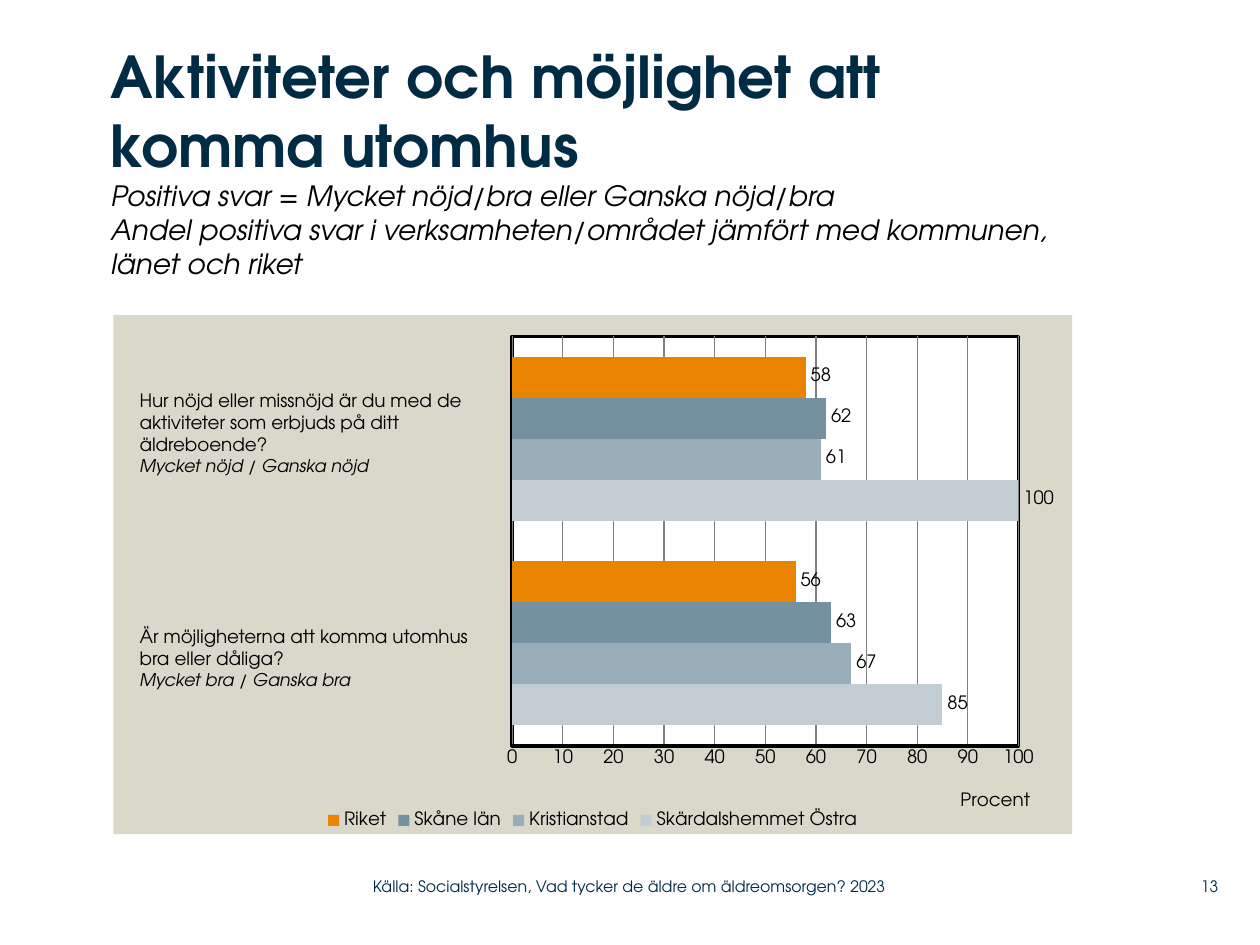
from lxml import etree
from pptx import Presentation
from pptx.chart.data import CategoryChartData
from pptx.dml.color import RGBColor
from pptx.enum.chart import XL_CHART_TYPE, XL_LABEL_POSITION, XL_LEGEND_POSITION, XL_TICK_MARK
from pptx.enum.text import MSO_ANCHOR, PP_ALIGN
from pptx.oxml import parse_xml
from pptx.oxml.ns import nsdecls, qn
from pptx.util import Inches, Pt

BAR = XL_CHART_TYPE.BAR_CLUSTERED
BOTTOM = XL_LEGEND_POSITION.BOTTOM
OUTSIDE = XL_LABEL_POSITION.OUTSIDE_END
NO_TICK = XL_TICK_MARK.NONE
TOP, MIDDLE = MSO_ANCHOR.TOP, MSO_ANCHOR.MIDDLE
LEFT, RIGHT = PP_ALIGN.LEFT, PP_ALIGN.RIGHT

NAVY, BLACK, WHITE, SAND, GREY = "002B45", "000000", "FFFFFF", "DAD7CB", "808080"
SERIES = [
    ("Skärdalshemmet Östra", (85, 100), "C2CDD3"),
    ("Kristianstad", (67, 61), "99ADB9"),
    ("Skåne län", (63, 62), "75909F"),
    ("Riket", (56, 58), "E98300"),
]


def color(value):
    """Turn a hex string into a colour."""
    return RGBColor.from_string(value)


def layout(**values):
    """Make a manual chart layout from fractions of the chart area."""
    parts = "".join(f'<c:{name} val="{value}"/>' for name, value in values.items())
    return parse_xml(f'<c:layout {nsdecls("c")}><c:manualLayout>{parts}</c:manualLayout></c:layout>')


def fill_area(element, fill, line):
    """Make shape properties for a chart area."""
    props = etree.SubElement(element, qn("c:spPr"))
    solid = f'<a:solidFill {nsdecls("a")}><a:srgbClr val="%s"/></a:solidFill>'
    props.append(parse_xml(solid % fill))
    border = etree.SubElement(props, qn("a:ln"))
    if line:
        border.set("w", str(Pt(2)))
        border.append(parse_xml(solid % line))
    else:
        etree.SubElement(border, qn("a:noFill"))
    return props


class SlideBuilder:
    """Holds the style and the current slide."""

    font_name = "TeX Gyre Adventor"

    def __init__(self, deck):
        """Add a title-only page."""
        self.page = deck.slides.add_slide(deck.slide_layouts[5])

    def style(self, font, size, hue=BLACK, bold=False, italic=False):
        """Format a font in the slide's typeface."""
        font.name, font.size = self.font_name, Pt(size)
        font.bold, font.italic = bold, italic
        font.color.rgb = color(hue)

    def set_lines(self, box, lines, anchor=TOP, align=LEFT, inset=None):
        """Fill a box with lines given as text and style."""
        frame = box.text_frame
        frame.word_wrap, frame.vertical_anchor = True, anchor
        if inset is not None:
            frame.margin_left = frame.margin_right = Inches(inset)
            frame.margin_top = frame.margin_bottom = Inches(inset)
        frame.text = "\n".join(text for text, _ in lines)
        for para, (_, look) in zip(frame.paragraphs, lines):
            para.alignment = align
            for span in para.runs:
                self.style(span.font, **look)

    def title(self, place, lines):
        """Move and fill the title placeholder."""
        box = self.page.shapes.title
        box.left, box.top, box.width, box.height = map(Inches, place)
        self.set_lines(box, lines, inset=0)

    def text(self, place, lines, **options):
        """Add a text box."""
        box = self.page.shapes.add_textbox(*map(Inches, place))
        self.set_lines(box, lines, **options)

    def bar_chart(self, place, categories, series, unit):
        """Add the clustered bar chart."""
        data = CategoryChartData()
        data.categories = categories
        for name, values, _ in series:
            data.add_series(name, values)
        chart = self.page.shapes.add_chart(BAR, *map(Inches, place), data).chart
        self.style(chart.font, 10.5)
        chart.has_title = False
        chart.has_legend = True
        chart.legend.position = BOTTOM
        chart.legend.include_in_layout = False
        self.style(chart.legend.font, 10.5)

        plot = chart.plots[0]
        plot.gap_width, plot.overlap, plot.vary_by_categories = 100, 0, False
        for bars, (_, _, hue) in zip(plot.series, series):
            bars.format.fill.solid()
            bars.format.fill.fore_color.rgb = color(hue)
            labels = bars.data_labels
            labels.show_value, labels.position = True, OUTSIDE
            self.style(labels.font, 10.5)

        chart.category_axis.visible = False
        axis = chart.value_axis
        axis.minimum_scale, axis.maximum_scale, axis.major_unit = 0, 100, 10
        axis.major_tick_mark = axis.minor_tick_mark = NO_TICK
        axis.format.line.color.rgb = color(BLACK)
        axis.format.line.width = Pt(2)
        axis.major_gridlines.format.line.color.rgb = color(GREY)
        axis.major_gridlines.format.line.width = Pt(0.75)
        self.style(axis.tick_labels.font, 10.5)
        axis.axis_title.text_frame.text = unit
        self.style(axis.axis_title.text_frame.paragraphs[0].runs[0].font, 10.5)
        self.arrange(chart, axis)

    def arrange(self, chart, axis):
        """Place and fill the parts of the chart."""
        title = axis.axis_title._element
        for old in title.findall(qn("c:layout")):
            title.remove(old)
        title.find(qn("c:tx")).addnext(layout(xMode="edge", yMode="edge", x=0.88, y=0.91))
        space = chart._chartSpace
        area = space.chart.plotArea
        for old in area.findall(qn("c:layout")):
            area.remove(old)
        area.insert(0, layout(layoutTarget="inner", xMode="edge", yMode="edge",
                              x=0.416, y=0.041, w=0.528, h=0.789))
        fill_area(area, WHITE, BLACK)
        space.chart.addnext(fill_area(space, SAND, None))


def main():
    """Build the slide."""
    deck = Presentation()
    deck.slide_width, deck.slide_height = Inches(10), Inches(7.5)
    slide = SlideBuilder(deck)
    heading = {"size": 33, "hue": NAVY, "bold": True}
    subtitle = {"size": 16, "italic": True}
    question, answer = {"size": 10.5}, {"size": 10, "italic": True}
    small = {"size": 9, "hue": NAVY}

    slide.bar_chart((0.9, 2.5, 7.61, 4.12), ("1", "2"), SERIES, "Procent")
    slide.title((0.88, 0.32, 7.8, 1.89), [
        ("Aktiviteter och möjlighet att komma utomhus", heading),
        ("Positiva svar = Mycket nöjd/bra eller Ganska nöjd/bra", subtitle),
        ("Andel positiva svar i verksamheten/området jämfört med kommunen, länet och riket", subtitle),
    ])
    slide.text((1.01, 3.04, 3, 0.98), [
        ("Hur nöjd eller missnöjd är du med de aktiviteter som erbjuds på ditt äldreboende?", question),
        ("Mycket nöjd / Ganska nöjd", answer),
    ])
    slide.text((1.01, 4.91, 3.01, 0.81), [
        ("Är möjligheterna att komma utomhus", question),
        ("bra eller dåliga?", question),
        ("Mycket bra / Ganska bra", answer),
    ])
    slide.text((9.2, 6.89, 0.47, 0.29), [("13", small)], anchor=MIDDLE, align=RIGHT, inset=0)
    slide.text((2.96, 6.89, 4.43, 0.29),
               [("Källa: Socialstyrelsen, Vad tycker de äldre om äldreomsorgen? 2023", small)],
               anchor=MIDDLE, inset=0)
    deck.save("out.pptx")


if __name__ == "__main__":
    main()
